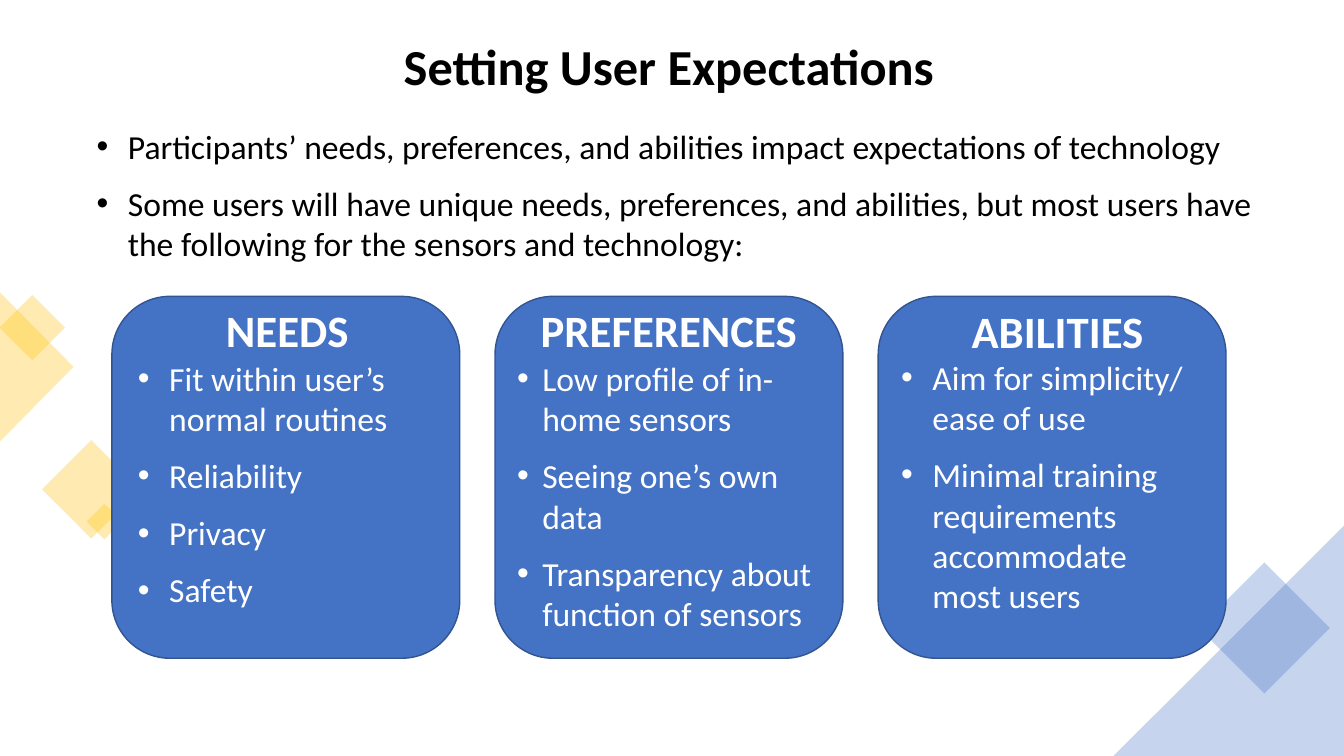
import pptx
import pptx.dml.color
import pptx.enum.shapes
import pptx.enum.text
import pptx.oxml
import pptx.oxml.ns
import pptx.util
from lxml import etree
from pptx.util import Inches

COLORS = {"gold": "FFC000", "blue": "4472C4", "edge": "325491",
          "white": "FFFFFF", "black": "000000"}
SHAPES = pptx.enum.shapes.MSO_SHAPE

deck = pptx.Presentation()
deck.slide_width, deck.slide_height = Inches(13.33), Inches(7.5)
slide = deck.slides.add_slide(deck.slide_layouts[6])


def paint(shape, color, opacity=100):
    """Give a flat, borderless fill with the opacity in percent."""
    shape.shadow.inherit = False
    shape.line.fill.background()
    shape.fill.solid()
    shape.fill.fore_color.rgb = pptx.dml.color.RGBColor.from_string(COLORS[color])
    if opacity < 100:
        tint = shape.fill._xPr.find(".//" + pptx.oxml.ns.qn("a:srgbClr"))
        etree.SubElement(tint, pptx.oxml.ns.qn("a:alpha"), val=str(opacity * 1000))


def add_text(box, lines, size, color, bold=False, indent=None):
    """Add a text box: bulleted when an indent in inches is given, else centred."""
    frame = slide.shapes.add_textbox(*map(Inches, box)).text_frame
    frame.word_wrap = True
    frame.text = "\n".join(lines)
    for paragraph in frame.paragraphs:
        font = paragraph.runs[0].font
        font.name, font.size, font.bold = "Calibri", pptx.util.Pt(size), bold
        font.color.rgb = pptx.dml.color.RGBColor.from_string(COLORS[color])
        if indent is None:
            paragraph.alignment = pptx.enum.text.PP_ALIGN.CENTER
            continue
        paragraph.space_after = pptx.util.Pt(12)
        properties = paragraph._p.get_or_add_pPr()
        properties.set("marL", str(Inches(indent)))
        properties.set("indent", str(-Inches(indent)))
        etree.SubElement(properties, pptx.oxml.ns.qn("a:buFont"), typeface="Arial")
        etree.SubElement(properties, pptx.oxml.ns.qn("a:buChar"), char="•")
    return frame


# Translucent corner decoration
outline = slide.shapes.build_freeform(0, Inches(2.9))
outline.add_line_segments([(Inches(0.73), Inches(3.64)), (0, Inches(4.38))])
paint(outline.convert_to_shape(), "gold", 30)

decorations = [
    (SHAPES.RECTANGLE, 0.09, 3.02, 0.46, 0.46, 45, "gold"),
    (SHAPES.RECTANGLE, 0.56, 4.51, 0.69, 0.69, 45, "gold"),
    (SHAPES.RECTANGLE, 0.91, 5.05, 0.25, 0.25, 45, "gold"),
    (SHAPES.ISOSCELES_TRIANGLE, 11.13, 6.12, 3.26, 1.62, 135, "blue"),
    (SHAPES.RECTANGLE, 12.08, 5.77, 0.92, 0.92, 45, "blue"),
]
for kind, left, top, width, height, angle, color in decorations:
    decoration = slide.shapes.add_shape(kind, *map(Inches, (left, top, width, height)))
    decoration.rotation = angle
    paint(decoration, color, 30)

# Title and introduction
title = add_text((0.73, 0.37, 11.81, 0.72), ["Setting User Expectations"], 36, "black", bold=True)
title.paragraphs[0].line_spacing = 0.9
add_text((0.86, 1.2, 11.81, 1.48), [
    "Participants’ needs, preferences, and abilities impact expectations of technology",
    "Some users will have unique needs, preferences, and abilities, but most users have "
    "the following for the sensors and technology:",
], 24, "black", indent=0.31)

# Cards: heading, heading box, list box, bullet indent, list
cards = [
    ("NEEDS", (1.59, 2.95, 2.52, 0.64), (1.27, 3.5, 3.16, 2.9), 0.31,
     ["Fit within user’s normal routines", "Reliability", "Privacy", "Safety"]),
    ("PREFERENCES", (5.22, 2.95, 2.83, 0.64), (5.03, 3.5, 3.19, 2.9), 0.25,
     ["Low profile of in-home sensors", "Seeing one’s own data",
      "Transparency about function of sensors"]),
    ("ABILITIES", (9.23, 2.96, 2.52, 0.64), (8.84, 3.49, 3.16, 2.69), 0.31,
     ["Aim for simplicity/ ease of use",
      "Minimal training requirements accommodate most users"]),
]
for column, (heading, heading_box, list_box, indent, points) in enumerate(cards):
    card = slide.shapes.add_shape(SHAPES.ROUNDED_RECTANGLE, Inches(1.11 + 3.8 * column),
                                  Inches(2.94), Inches(3.45), Inches(3.59))
    paint(card, "blue")
    card.line.color.rgb = pptx.dml.color.RGBColor.from_string(COLORS["edge"])
    card.line.width = pptx.util.Pt(1)
    add_text(heading_box, [heading], 32, "white", bold=True)
    add_text(list_box, points, 24, "white", indent=indent)

deck.save("out.pptx")
